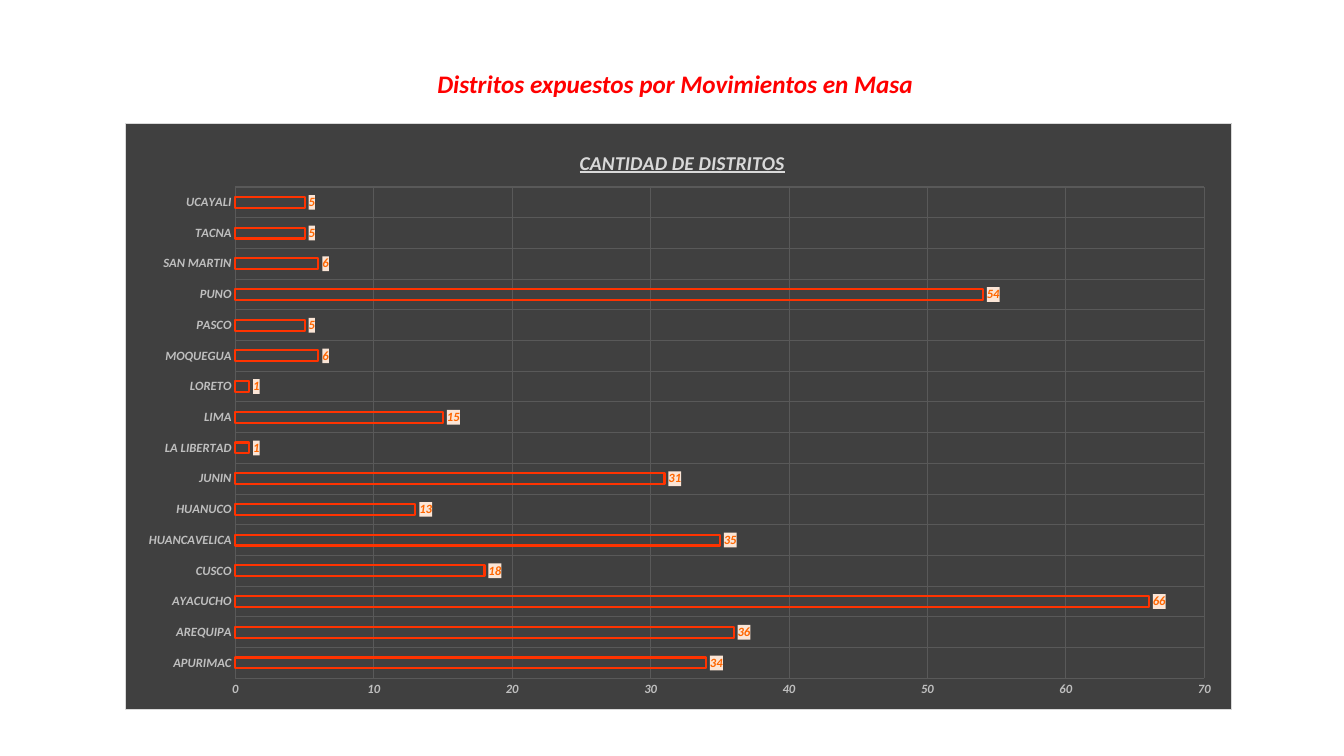
from lxml import etree
from pptx import Presentation
from pptx.chart.data import CategoryChartData
from pptx.dml.color import RGBColor
from pptx.enum.chart import XL_CHART_TYPE as ChartType
from pptx.enum.chart import XL_LABEL_POSITION as LabelPosition
from pptx.enum.chart import XL_TICK_MARK as TickMark
from pptx.enum.text import MSO_ANCHOR as Anchor
from pptx.enum.text import PP_ALIGN as Align
from pptx.oxml import parse_xml
from pptx.oxml.ns import nsdecls, qn
from pptx.util import Cm, Pt

RED = RGBColor(0xFF, 0x00, 0x00)
BAR_RED = RGBColor(0xFF, 0x33, 0x00)
ORANGE = RGBColor(0xFF, 0x66, 0x00)
PEACH = RGBColor(0xFB, 0xE5, 0xD6)
CHARCOAL = RGBColor(0x40, 0x40, 0x40)
GRID_GRAY = RGBColor(0x59, 0x59, 0x59)
AXIS_GRAY = RGBColor(0xBF, 0xBF, 0xBF)
PALE_GRAY = RGBColor(0xD9, 0xD9, 0xD9)
FONT = "Calibri"

DISTRICTS = {
    "APURIMAC": 34, "AREQUIPA": 36, "AYACUCHO": 66, "CUSCO": 18,
    "HUANCAVELICA": 35, "HUANUCO": 13, "JUNIN": 31, "LA LIBERTAD": 1,
    "LIMA": 15, "LORETO": 1, "MOQUEGUA": 6, "PASCO": 5,
    "PUNO": 54, "SAN MARTIN": 6, "TACNA": 5, "UCAYALI": 5,
}


def style_font(font, size, color):
    font.name = FONT
    font.size = Pt(size)
    font.bold = font.italic = True
    font.color.rgb = color


def area_format(fill, border=None):
    """Shape properties for chart parts that have no public format."""
    line = "<a:ln><a:noFill/></a:ln>"
    if border is not None:
        line = (f'<a:ln w="{Pt(0.75)}"><a:solidFill><a:srgbClr val="{border}"/>'
                "</a:solidFill></a:ln>")
    return parse_xml(
        f'<c:spPr {nsdecls("c", "a")}><a:solidFill><a:srgbClr val="{fill}"/>'
        f"</a:solidFill>{line}</c:spPr>")


def manual_layout(x, y, size=None):
    """Chart layout in fractions of the chart area."""
    values = {"xMode": "edge", "yMode": "edge", "x": x, "y": y}
    if size:
        values = {"layoutTarget": "inner", **values, "w": size[0], "h": size[1]}
    layout = etree.Element(qn("c:layout"))
    manual = etree.SubElement(layout, qn("c:manualLayout"))
    for name, value in values.items():
        etree.SubElement(manual, qn(f"c:{name}")).set("val", str(value))
    return layout


def replace_layout(parent, layout, index):
    for old in parent.findall(qn("c:layout")):
        parent.remove(old)
    parent.insert(index, layout)


def add_heading(page, left, top, width, height):
    box = page.shapes.add_textbox(left, top, width, height)
    frame = box.text_frame
    frame.word_wrap = False
    frame.vertical_anchor = Anchor.MIDDLE
    para = frame.paragraphs[0]
    para.alignment = Align.CENTER
    span = para.add_run()
    span.text = "Distritos expuestos por Movimientos en Masa"
    style_font(span.font, 18, RED)


def style_axis(axis):
    axis.major_tick_mark = axis.minor_tick_mark = TickMark.NONE
    axis.format.line.fill.background()
    axis.has_major_gridlines = True
    grid = axis.major_gridlines.format.line
    grid.color.rgb = GRID_GRAY
    grid.width = Pt(0.75)
    style_font(axis.tick_labels.font, 9, AXIS_GRAY)


def style_bars(plot):
    plot.gap_width = 182
    plot.overlap = -50
    plot.vary_by_categories = False
    bars = plot.series[0]
    bars.format.fill.background()
    bars.format.line.color.rgb = BAR_RED
    bars.format.line.width = Pt(1.5)

    # Value labels on pale boxes
    labels = bars.data_labels
    labels.show_value = True
    labels.position = LabelPosition.OUTSIDE_END
    labels.number_format = "#,##0"
    labels.number_format_is_linked = False
    style_font(labels.font, 9, ORANGE)
    label_xml = bars._element.find(qn("c:dLbls"))
    label_xml.find(qn("c:txPr")).addprevious(area_format(PEACH))


def add_district_chart(page, left, top, width, height):
    data = CategoryChartData(number_format="#,##0")
    data.categories = list(DISTRICTS)
    data.add_series("CANTIDAD DE DISTRITOS", list(DISTRICTS.values()))
    chart = page.shapes.add_chart(
        ChartType.BAR_CLUSTERED, left, top, width, height, data).chart
    chart.has_legend = False
    chart.font.name = FONT
    chart.font.size = Pt(10)

    # Dark chart area
    chart_xml = chart._chartSpace.find(qn("c:chart"))
    chart_xml.addnext(area_format(CHARCOAL, PALE_GRAY))
    replace_layout(chart_xml.find(qn("c:plotArea")),
                   manual_layout(0.099, 0.109, (0.876, 0.838)), 0)

    # Chart title
    chart.has_title = True
    span = chart.chart_title.text_frame.paragraphs[0].add_run()
    span.text = "CANTIDAD DE DISTRITOS"
    style_font(span.font, 14, PALE_GRAY)
    span.font.underline = True
    replace_layout(chart_xml.find(qn("c:title")), manual_layout(0.407, 0.038), 1)

    # Axes and bars
    style_axis(chart.category_axis)
    style_axis(chart.value_axis)
    chart.value_axis.minimum_scale = 0
    chart.value_axis.maximum_scale = 70
    chart.value_axis.major_unit = 10
    chart.value_axis.tick_labels.number_format = "#,##0"
    chart.value_axis.tick_labels.number_format_is_linked = False
    style_bars(chart.plots[0])


def main():
    deck = Presentation()
    deck.slide_width = Cm(33.87)
    deck.slide_height = Cm(19.05)
    page = deck.slides.add_slide(deck.slide_layouts[6])
    add_heading(page, Cm(10.69), Cm(1.6), Cm(12.65), Cm(1.02))
    add_district_chart(page, Cm(3.16), Cm(3.09), Cm(27.9), Cm(14.8))
    deck.save("out.pptx")


if __name__ == "__main__":
    main()
